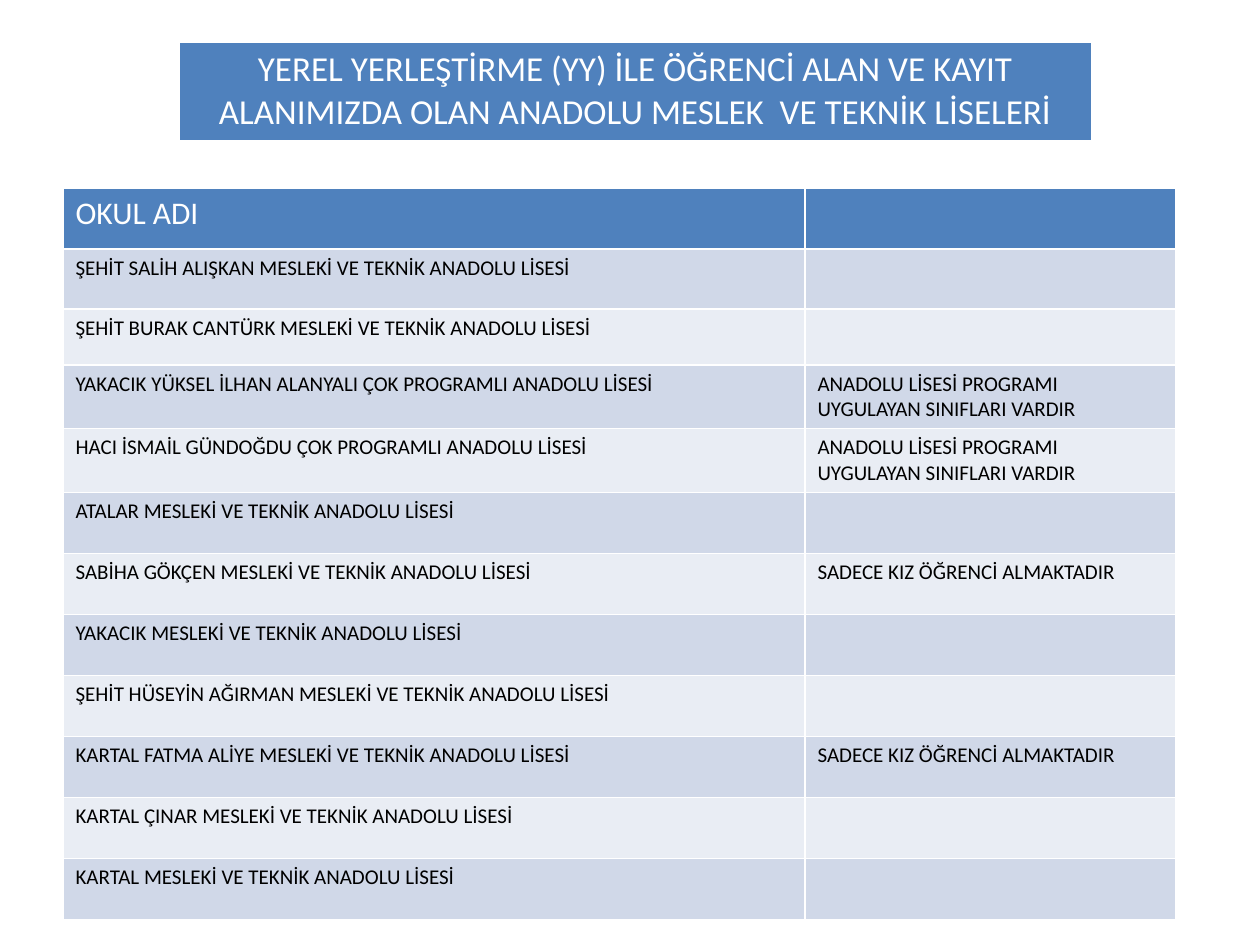
import pptx
import pptx.dml.color
import pptx.enum.text
import pptx.oxml.ns
import pptx.util
from lxml import etree

PX = 914400 // 126
BLUE, WHITE, BLACK = "4F81BD", "FFFFFF", "000000"
BANDS = ["D0D8E8", "E9EDF4"]


def color(value):
    return pptx.dml.color.RGBColor.from_string(value)


def style_cell(cell, text, size, text_color, fill):
    cell.text = text
    font = cell.text_frame.paragraphs[0].font
    font.size = pptx.util.Pt(size)
    font.name = "Calibri"
    font.bold = False
    font.color.rgb = color(text_color)
    properties = cell._tc.get_or_add_tcPr()
    for side in "LRTB":
        border = etree.SubElement(properties, pptx.oxml.ns.qn(f"a:ln{side}"), w=str(pptx.util.Pt(1)))
        border_fill = etree.SubElement(border, pptx.oxml.ns.qn("a:solidFill"))
        etree.SubElement(border_fill, pptx.oxml.ns.qn("a:srgbClr"), val=WHITE)
    cell.fill.solid()
    cell.fill.fore_color.rgb = color(fill)


prs = pptx.Presentation()
prs.slide_width = pptx.util.Inches(10)
prs.slide_height = pptx.util.Inches(7.5)
slide = prs.slides.add_slide(prs.slide_layouts[6])

heading = slide.shapes.add_table(1, 1, 179 * PX, 42 * PX, 913 * PX, 97 * PX).table
heading_cell = heading.cell(0, 0)
style_cell(
    heading_cell,
    "YEREL YERLEŞTİRME (YY) İLE ÖĞRENCİ ALAN VE KAYIT ALANIMIZDA OLAN ANADOLU MESLEK  VE TEKNİK LİSELERİ",
    20, WHITE, BLUE,
)
heading_cell.text_frame.paragraphs[0].alignment = pptx.enum.text.PP_ALIGN.CENTER

anatolian_program = "ANADOLU LİSESİ PROGRAMI UYGULAYAN SINIFLARI VARDIR"
girls_only = "SADECE KIZ ÖĞRENCİ ALMAKTADIR"
schools = [
    ("ŞEHİT SALİH ALIŞKAN MESLEKİ VE TEKNİK ANADOLU LİSESİ", ""),
    ("ŞEHİT BURAK CANTÜRK MESLEKİ VE TEKNİK ANADOLU LİSESİ", ""),
    ("YAKACIK YÜKSEL İLHAN ALANYALI ÇOK PROGRAMLI ANADOLU LİSESİ", anatolian_program),
    ("HACI İSMAİL GÜNDOĞDU ÇOK PROGRAMLI ANADOLU LİSESİ", anatolian_program),
    ("ATALAR MESLEKİ VE TEKNİK ANADOLU LİSESİ", ""),
    ("SABİHA GÖKÇEN MESLEKİ VE TEKNİK ANADOLU LİSESİ", girls_only),
    ("YAKACIK MESLEKİ VE TEKNİK ANADOLU LİSESİ", ""),
    ("ŞEHİT HÜSEYİN AĞIRMAN MESLEKİ VE TEKNİK ANADOLU LİSESİ", ""),
    ("KARTAL FATMA ALİYE MESLEKİ VE TEKNİK ANADOLU LİSESİ", girls_only),
    ("KARTAL ÇINAR MESLEKİ VE TEKNİK ANADOLU LİSESİ", ""),
    ("KARTAL MESLEKİ VE TEKNİK ANADOLU LİSESİ", ""),
]
row_heights = [61, 60, 56] + [61] * 9

school_list = slide.shapes.add_table(
    len(row_heights), 2, 63 * PX, 188 * PX, 1113 * PX, sum(row_heights) * PX
).table
for column, width in zip(school_list.columns, [742, 371]):
    column.width = width * PX
for row, height in zip(school_list.rows, row_heights):
    row.height = height * PX

for cell, title in zip(school_list.rows[0].cells, ["OKUL ADI", ""]):
    style_cell(cell, title, 18, WHITE, BLUE)
for index, school in enumerate(schools):
    for cell, text in zip(school_list.rows[index + 1].cells, school):
        style_cell(cell, text, 12, BLACK, BANDS[index % 2])

prs.save("out.pptx")
